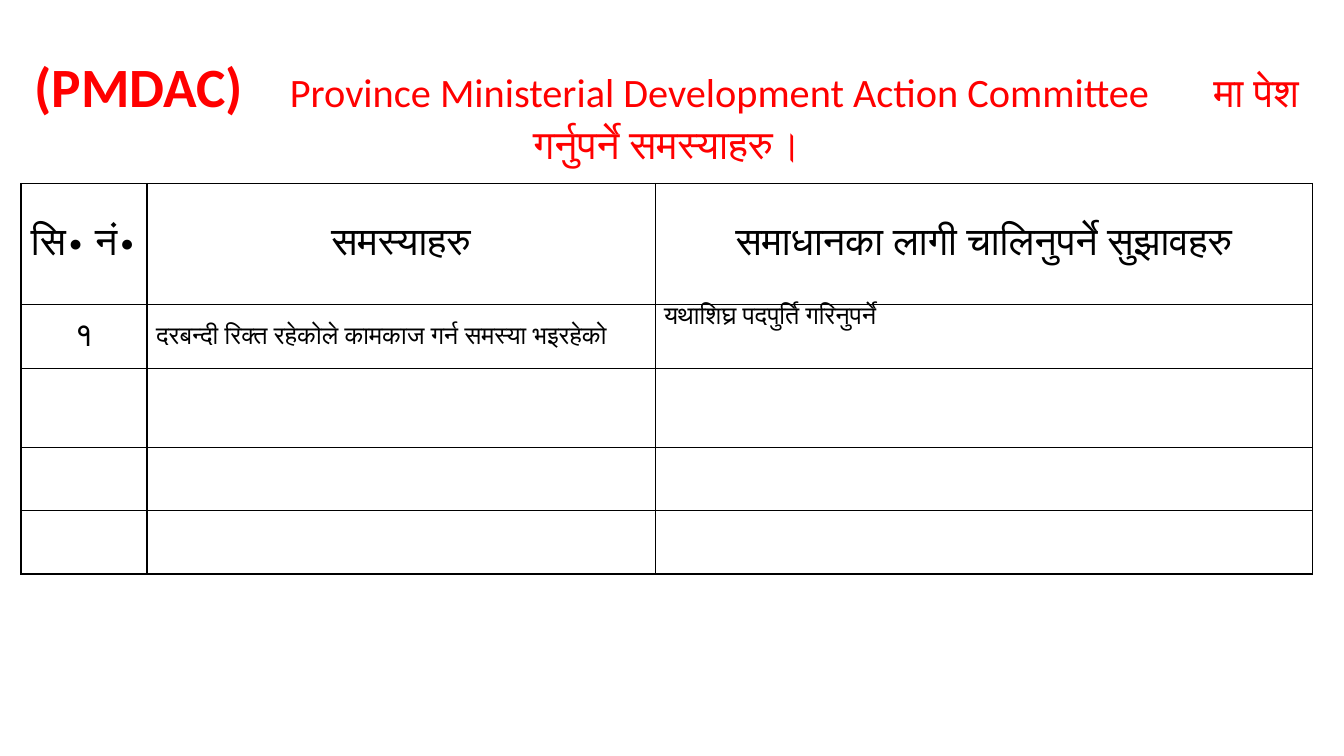
from lxml import etree
from pptx import Presentation
from pptx.dml.color import RGBColor
from pptx.enum.text import MSO_ANCHOR, MSO_AUTO_SIZE, PP_ALIGN
from pptx.oxml.ns import qn
from pptx.util import Pt

LEFT, CENTER = PP_ALIGN.LEFT, PP_ALIGN.CENTER
TOP, MIDDLE, BOTTOM = MSO_ANCHOR.TOP, MSO_ANCHOR.MIDDLE, MSO_ANCHOR.BOTTOM
NO_FIT = MSO_AUTO_SIZE.NONE
TITLE_ONLY = 5
RED, BLACK = "FF0000", "000000"

TITLE_RUNS = [
    ("(PMDAC)", 39.6, True, 0),
    (" ", 28.8, False, 27),
    ("Province Ministerial Development Action Committee", 28.8, False, 0),
    (" ", 28.8, False, 39),
    ("मा पेश गर्नुपर्ने समस्याहरु।", 28.8, False, 0),
]
COLUMNS = [90, 363, 469.5]
ROWS = [86.5, 46, 56, 45.3, 45.3]
CELLS = {
    (0, 0): ("सि∙ नं∙", 28, CENTER, MIDDLE),
    (0, 1): ("समस्याहरु", 28, CENTER, MIDDLE),
    (0, 2): ("समाधानका लागी चालिनुपर्ने सुझावहरु", 28, CENTER, MIDDLE),
    (1, 0): ("१", 24, CENTER, MIDDLE),
    (1, 1): ("दरबन्दी रिक्त रहेकोले कामकाज गर्न समस्या भइरहेको", 18, LEFT, MIDDLE),
    (1, 2): ("यथाशिघ्र पदपुर्ति गरिनुपर्ने", 18, LEFT, TOP),
}


def rgb(value):
    return RGBColor.from_string(value)


def assign(target, values):
    for name, value in values.items():
        setattr(target, name, value)


class Deck:
    font_name = "Calibri"

    def __init__(self, prs):
        self.s = prs.slides.add_slide(prs.slide_layouts[TITLE_ONLY])

    def style(self, font, size, color, bold=False):
        assign(font, {"name": self.font_name, "size": Pt(size), "bold": bold})
        font.color.rgb = rgb(color)

    def title(self, x, y, w, h, runs):
        sp = self.s.shapes.title
        assign(sp, {"left": Pt(x), "top": Pt(y), "width": Pt(w), "height": Pt(h)})
        tf = sp.text_frame
        assign(tf, {"word_wrap": True, "auto_size": NO_FIT,
                    "vertical_anchor": BOTTOM, "margin_bottom": 0})
        p = tf.paragraphs[0]
        assign(p, {"alignment": CENTER, "line_spacing": 1.0})
        for text, size, bold, spacing in runs:
            r = p.add_run()
            r.text = text
            self.style(r.font, size, RED, bold)
            if spacing:
                r.font._element.set("spc", str(spacing * 100))

    def borders(self, cell, color, width):
        tc_pr = cell._tc.get_or_add_tcPr()
        for side in ("a:lnL", "a:lnR", "a:lnT", "a:lnB"):
            ln = etree.SubElement(tc_pr, qn(side), w=str(Pt(width)))
            fill = etree.SubElement(ln, qn("a:solidFill"))
            etree.SubElement(fill, qn("a:srgbClr"), val=color)

    def table(self, x, y, columns, rows, cells):
        frame = self.s.shapes.add_table(len(rows), len(columns), Pt(x), Pt(y),
                                        Pt(sum(columns)), Pt(sum(rows)))
        table = frame.table
        assign(table, {"first_row": False, "horz_banding": False})
        for column, width in zip(table.columns, columns):
            column.width = Pt(width)
        for i, height in enumerate(rows):
            table.rows[i].height = Pt(height)
            for j in range(len(columns)):
                self.cell(table.cell(i, j), *cells.get((i, j), ("", 18, LEFT, TOP)))

    def cell(self, cell, text, size, alignment, anchor):
        self.borders(cell, BLACK, 1)
        cell.fill.background()
        assign(cell, {"margin_left": Pt(6.5), "margin_right": Pt(6.5),
                      "margin_top": 0, "margin_bottom": 0,
                      "vertical_anchor": anchor})
        p = cell.text_frame.paragraphs[0]
        p.alignment = alignment
        if text:
            r = p.add_run()
            r.text = text
            self.style(r.font, size, BLACK)


def main():
    prs = Presentation()
    assign(prs, {"slide_width": Pt(960), "slide_height": Pt(540)})
    deck = Deck(prs)
    deck.title(15, 11.5, 922.5, 108, TITLE_RUNS)
    deck.table(15, 131, COLUMNS, ROWS, CELLS)
    prs.save("out.pptx")


if __name__ == "__main__":
    main()
